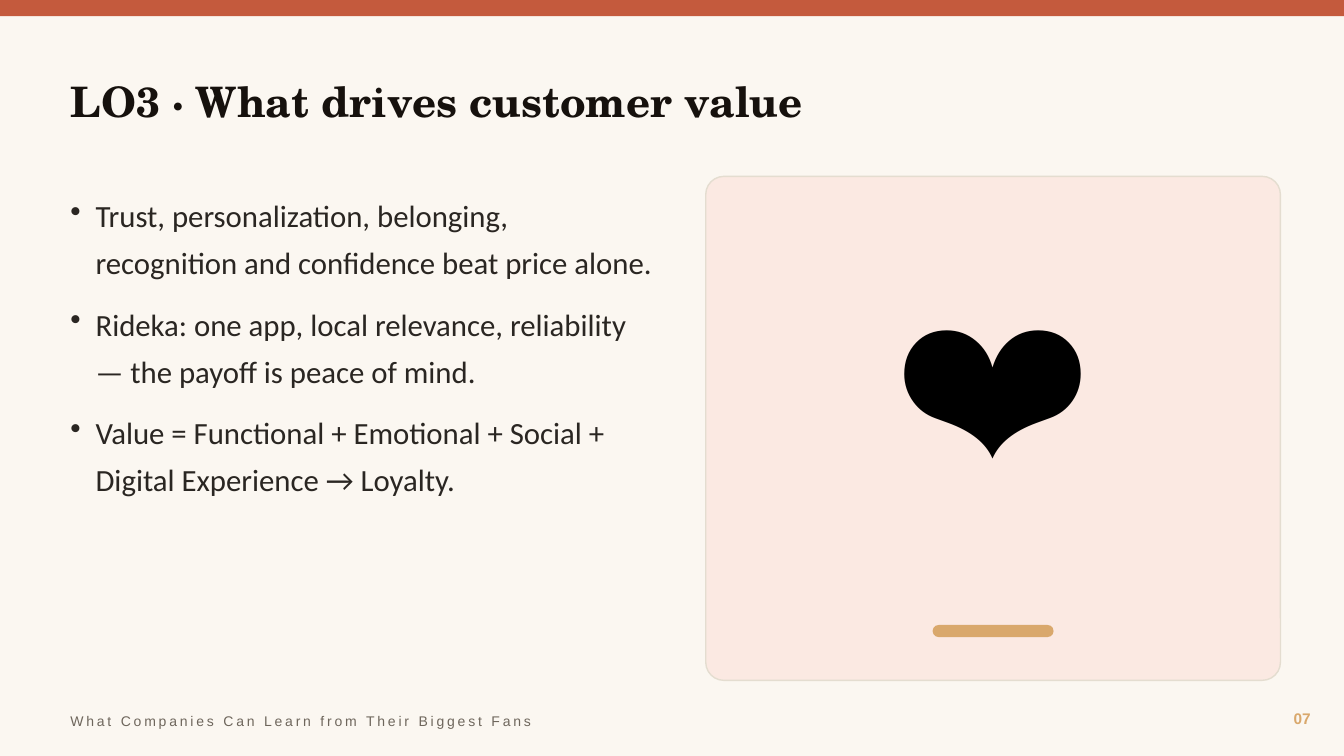
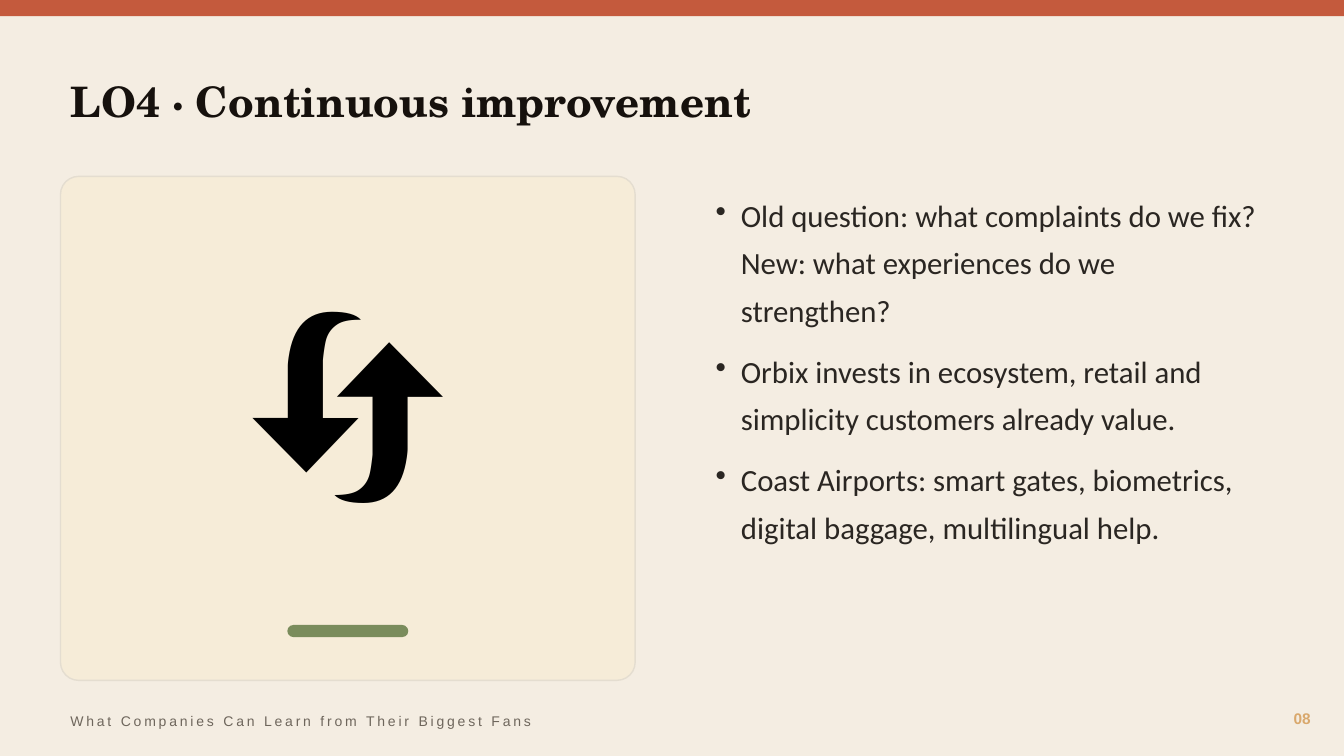
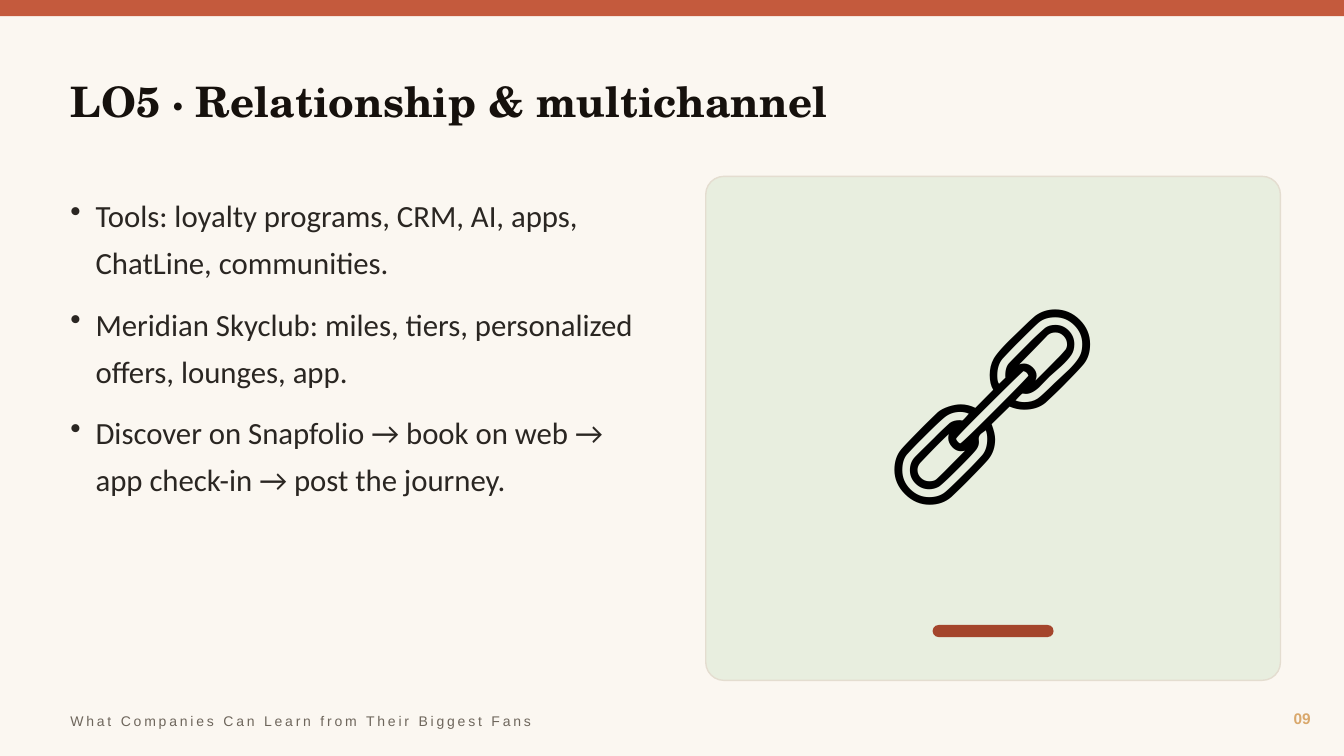
from dataclasses import dataclass

from lxml.etree import SubElement
from pptx import Presentation
from pptx.dml.color import RGBColor
from pptx.enum.shapes import MSO_SHAPE
from pptx.enum.text import MSO_ANCHOR, MSO_AUTO_SIZE, PP_ALIGN
from pptx.oxml.ns import qn
from pptx.util import Inches, Pt


@dataclass(frozen=True)
class Theme:
    cream: str = "FBF7F1"
    sand: str = "F4EDE2"
    terracotta: str = "C45A3D"
    rust: str = "A4452C"
    gold: str = "D9A86C"
    olive: str = "7A8C5C"
    blush: str = "FBE9E2"
    wheat: str = "F6ECD8"
    sage: str = "E8EEDF"
    border: str = "E4DDD0"
    ink: str = "16110D"
    body: str = "2A2622"
    muted: str = "6E665C"
    black: str = "000000"
    title_font: str = "TeX Gyre Schola"
    body_font: str = "Calibri"
    footer_font: str = "Arial"
    title_size: float = 30
    body_size: float = 22
    symbol_size: float = 150
    number_size: float = 11
    footer_size: float = 10


THEME = Theme()

# Two equal columns with a gutter, in inches
SLIDE_WIDTH, SLIDE_HEIGHT = 13.33, 7.5
MARGIN, COLUMN, GUTTER = 0.6, 5.7, 0.7
COLUMN_LEFTS = [MARGIN + index * (COLUMN + GUTTER) for index in range(2)]
CONTENT_WIDTH = 2 * COLUMN + GUTTER
PANEL_TOP, PANEL_HEIGHT = 1.75, 5
SYMBOL_HEIGHT = 0.82 * PANEL_HEIGHT
ACCENT_WIDTH, ACCENT_HEIGHT = 1.2, 0.12
BULLET_INDENT = 0.25

FOOTER = "What Companies Can Learn from Their Biggest Fans"

SLIDES = [
    dict(
        title="LO3 · What drives customer value", number="07",
        symbol="❤️", panel_column=1,
        background=THEME.cream, panel=THEME.blush, accent=THEME.gold,
        points=[
            "Trust, personalization, belonging, recognition and confidence beat price alone.",
            "Rideka: one app, local relevance, reliability — the payoff is peace of mind.",
            "Value = Functional + Emotional + Social + Digital Experience → Loyalty.",
        ],
    ),
    dict(
        title="LO4 · Continuous improvement", number="08",
        symbol="🔄", panel_column=0,
        background=THEME.sand, panel=THEME.wheat, accent=THEME.olive,
        points=[
            "Old question: what complaints do we fix? New: what experiences do we strengthen?",
            "Orbix invests in ecosystem, retail and simplicity customers already value.",
            "Coast Airports: smart gates, biometrics, digital baggage, multilingual help.",
        ],
    ),
    dict(
        title="LO5 · Relationship & multichannel", number="09",
        symbol="🔗", panel_column=1,
        background=THEME.cream, panel=THEME.sage, accent=THEME.rust,
        points=[
            "Tools: loyalty programs, CRM, AI, apps, ChatLine, communities.",
            "Meridian Skyclub: miles, tiers, personalized offers, lounges, app.",
            "Discover on Snapfolio → book on web → app check-in → post the journey.",
        ],
    ),
]


def write(box, *lines, place, font, size, color, bold=False, align=PP_ALIGN.LEFT,
          anchor=MSO_ANCHOR.MIDDLE, bullets=False, tracking=0):
    """Place a text box or placeholder and fill it with one paragraph per line."""
    box.left, box.top, box.width, box.height = map(Inches, place)
    frame = box.text_frame
    frame.word_wrap = True
    frame.auto_size = MSO_AUTO_SIZE.NONE
    frame.vertical_anchor = anchor
    for index, line in enumerate(lines):
        para = frame.add_paragraph() if index else frame.paragraphs[0]
        para.alignment = align
        if bullets:
            properties = para._p.get_or_add_pPr()
            properties.set("marL", str(Inches(BULLET_INDENT)))
            properties.set("indent", str(-Inches(BULLET_INDENT)))
            SubElement(properties, qn("a:buChar"), char="•")
            para.line_spacing = 1.28
            para.space_after = Pt(10)
        span = para.add_run()
        span.text = line
        span.font.name = font
        span.font.size = Pt(size)
        span.font.bold = bold
        span.font.color.rgb = RGBColor.from_string(color)
        if tracking:
            span.font._element.set("spc", str(tracking * 100))


def add_block(page, kind, place, fill, line=None, rounding=None):
    block = page.shapes.add_shape(kind, *map(Inches, place))
    block.shadow.inherit = False
    block.fill.solid()
    block.fill.fore_color.rgb = RGBColor.from_string(fill)
    if line:
        block.line.color.rgb = RGBColor.from_string(line)
        block.line.width = Pt(1)
    else:
        block.line.fill.background()
    if rounding is not None:
        block.adjustments[0] = rounding


deck = Presentation()
deck.slide_width, deck.slide_height = Inches(SLIDE_WIDTH), Inches(SLIDE_HEIGHT)
title_only = deck.slide_layouts.get_by_name("Title Only")

for content in SLIDES:
    page = deck.slides.add_slide(title_only)
    page.background.fill.solid()
    page.background.fill.fore_color.rgb = RGBColor.from_string(content["background"])

    add_block(page, MSO_SHAPE.RECTANGLE, (0, 0, SLIDE_WIDTH, 0.16), THEME.terracotta)
    write(page.shapes.title, content["title"], place=(MARGIN, 0.5, CONTENT_WIDTH, 1),
          font=THEME.title_font, size=THEME.title_size, color=THEME.ink, bold=True)

    panel_left = COLUMN_LEFTS[content["panel_column"]]
    add_block(page, MSO_SHAPE.ROUNDED_RECTANGLE, (panel_left, PANEL_TOP, COLUMN, PANEL_HEIGHT),
              content["panel"], line=THEME.border, rounding=0.036)
    write(page.shapes.add_textbox(0, 0, 0, 0), content["symbol"],
          place=(panel_left, PANEL_TOP, COLUMN, SYMBOL_HEIGHT), font=THEME.body_font,
          size=THEME.symbol_size, color=THEME.black, align=PP_ALIGN.CENTER)
    accent_left = panel_left + (COLUMN - ACCENT_WIDTH) / 2
    add_block(page, MSO_SHAPE.ROUNDED_RECTANGLE, (accent_left, 6.2, ACCENT_WIDTH, ACCENT_HEIGHT),
              content["accent"], rounding=0.5)

    # Points on the left may run a little into the gutter
    points_column = 1 - content["panel_column"]
    points_width = COLUMN if points_column else COLUMN + 0.3
    write(page.shapes.add_textbox(0, 0, 0, 0), *content["points"],
          place=(COLUMN_LEFTS[points_column], 1.8, points_width, 5), font=THEME.body_font,
          size=THEME.body_size, color=THEME.body, anchor=MSO_ANCHOR.TOP, bullets=True)

    write(page.shapes.add_textbox(0, 0, 0, 0), content["number"], place=(12.2, 6.95, 0.9, 0.35),
          font=THEME.footer_font, size=THEME.number_size, color=THEME.gold, bold=True,
          align=PP_ALIGN.RIGHT)
    write(page.shapes.add_textbox(0, 0, 0, 0), FOOTER, place=(MARGIN, 7, 8, 0.3),
          font=THEME.footer_font, size=THEME.footer_size, color=THEME.muted, tracking=2)

deck.save("out.pptx")
